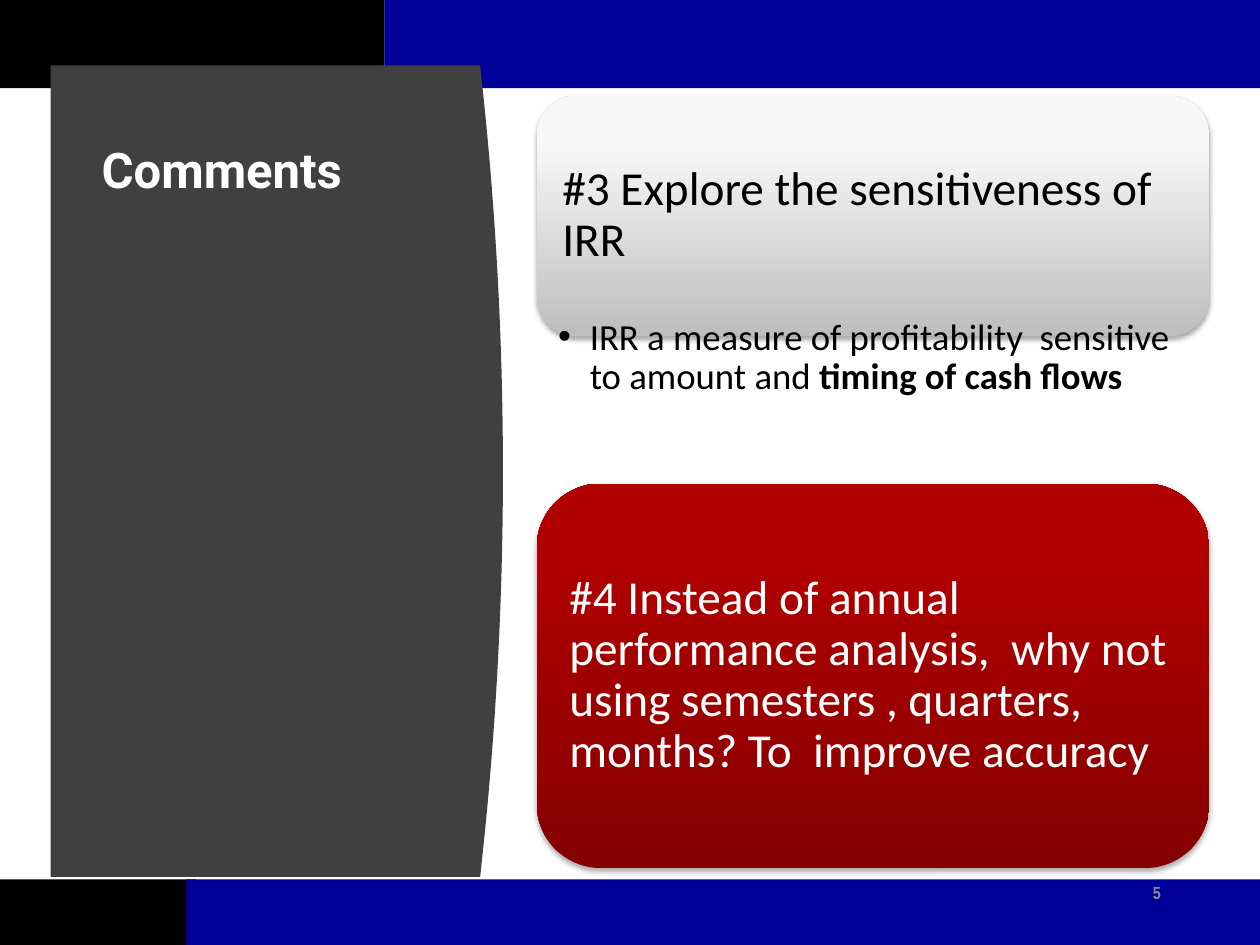
from dataclasses import dataclass

from lxml.etree import SubElement
from pptx import Presentation
from pptx.dml.color import RGBColor
from pptx.enum.shapes import MSO_SHAPE
from pptx.enum.text import MSO_ANCHOR, MSO_AUTO_SIZE, PP_ALIGN
from pptx.oxml.ns import qn
from pptx.util import Cm, Pt


@dataclass
class Box:
    left: float
    top: float
    width: float
    height: float

    def spot(self) -> list:
        return [Cm(v) for v in (self.left, self.top, self.width, self.height)]


@dataclass
class Band:
    box: Box
    fill: str


@dataclass
class Card:
    box: Box
    low: str
    high: str
    ink: str
    text: str


BLACK, BLUE, WHITE = "000000", "000099", "FFFFFF"
BANDS = [
    Band(Box(0, 17.73, 3.96, 1.32), BLACK),
    Band(Box(3.76, 17.73, 21.64, 1.32), BLUE),
    Band(Box(7.75, 0, 17.65, 1.78), BLUE),
    Band(Box(0, 0, 7.75, 1.78), BLACK),
]
CARDS = [
    Card(Box(10.82, 1.93, 13.56, 4.85), "BEBEBE", "F7F7F7", BLACK,
         "#3 Explore the sensitiveness of IRR"),
    Card(Box(10.82, 9.75, 13.56, 7.75), "850000", "B00000", WHITE,
         "#4 Instead of annual performance analysis,  why not using "
         "semesters , quarters, months? To  improve accuracy"),
]


def hue(code: str) -> RGBColor:
    return RGBColor.from_string(code)


def style(para, face: str, size: float, ink: str, bold: bool | None = None) -> None:
    para.font.name = face
    para.font.size = Pt(size)
    para.font.color.rgb = hue(ink)
    para.font.bold = bold


def inset(frame, left: float, top: float, right: float, base: float) -> None:
    frame.word_wrap = True
    frame.auto_size = MSO_AUTO_SIZE.NONE
    frame.margin_left, frame.margin_top = Cm(left), Cm(top)
    frame.margin_right, frame.margin_bottom = Cm(right), Cm(base)


def paint(shape, fill: str) -> None:
    shape.shadow.inherit = False
    shape.fill.solid()
    shape.fill.fore_color.rgb = hue(fill)
    shape.line.fill.background()


def place(holder, box: Box) -> None:
    holder.left, holder.top, holder.width, holder.height = box.spot()
    node = holder.element
    node.getparent().append(node)


def draw_band(slide, band: Band) -> None:
    paint(slide.shapes.add_shape(MSO_SHAPE.RECTANGLE, *band.box.spot()), band.fill)


def draw_panel(slide) -> None:
    left, top, base, edge, bulge, steps = 1.02, 1.32, 17.68, 9.68, 0.46, 40
    curve = []
    for i in range(steps + 1):
        t = 2 * i / steps - 1
        curve.append((Cm(edge + bulge * (1 - t * t)), Cm(top + (base - top) * i / steps)))
    pen = slide.shapes.build_freeform(Cm(left), Cm(top))
    pen.add_line_segments(curve + [(Cm(left), Cm(base))], close=True)
    paint(pen.convert_to_shape(), "404040")


def add_glow(shape) -> None:
    shape.shadow.inherit = False
    glow = shape.element.spPr.find(qn("a:effectLst"))
    drop = SubElement(glow, qn("a:outerShdw"), blurRad=str(Pt(3.1)), dist=str(Pt(1.8)),
                      dir="5400000", rotWithShape="0")
    tint = SubElement(drop, qn("a:srgbClr"), val=BLACK)
    SubElement(tint, qn("a:alpha"), val="35000")


def draw_card(slide, card: Card) -> None:
    shape = slide.shapes.add_shape(MSO_SHAPE.ROUNDED_RECTANGLE, *card.box.spot())
    shape.line.fill.background()
    shape.fill.gradient()
    shape.fill.gradient_angle = 90
    for stop, code, pos in zip(shape.fill.gradient_stops, (card.low, card.high), (0, 0.8)):
        stop.color.rgb = hue(code)
        stop.position = pos
    add_glow(shape)
    frame = shape.text_frame
    inset(frame, 0.28, 0.28, 0.28, 0.28)
    frame.vertical_anchor = MSO_ANCHOR.MIDDLE
    para = frame.paragraphs[0]
    para.text = card.text
    para.alignment = PP_ALIGN.LEFT
    para.line_spacing = 0.9
    style(para, "Calibri", 27, card.ink)


def set_title(slide) -> None:
    title = slide.shapes.title
    place(title, Box(1.8, 2.82, 7.11, 13.31))
    frame = title.text_frame
    inset(frame, 0.25, 0.13, 0.25, 0.13)
    frame.vertical_anchor = MSO_ANCHOR.TOP
    para = frame.paragraphs[0]
    para.text = "Comments"
    para.alignment = PP_ALIGN.LEFT
    para.line_spacing = 0.9
    style(para, "Roboto", 28, WHITE, True)


def set_list(slide) -> None:
    body = slide.placeholders[1]
    place(body, Box(10.82, 6.32, 13.56, 3.43))
    frame = body.text_frame
    inset(frame, 0.43, 0.1, 0.53, 0.1)
    para = frame.paragraphs[0]
    para.add_run().text = "IRR a measure of profitability  sensitive to amount and "
    bold = para.add_run()
    bold.text = "timing of cash flows"
    bold.font.bold = True
    para.line_spacing = 0.9
    para.space_before = Pt(0)
    style(para, "Calibri", 21, BLACK)
    props = para._p.get_or_add_pPr()
    props.set("marL", str(Cm(0.64)))
    props.set("indent", str(-Cm(0.64)))


def add_page(slide) -> None:
    box = slide.shapes.add_textbox(*Box(22.35, 17.65, 1.3, 1.02).spot())
    frame = box.text_frame
    inset(frame, 0.25, 0.13, 0.25, 0.13)
    para = frame.paragraphs[0]
    para.text = "5"
    para.alignment = PP_ALIGN.RIGHT
    style(para, "Arial Narrow", 10, "8C8C8C", True)


def main() -> None:
    deck = Presentation()
    deck.slide_width, deck.slide_height = Cm(25.4), Cm(19.05)
    slide = deck.slides.add_slide(deck.slide_layouts[1])
    for band in BANDS:
        draw_band(slide, band)
    draw_panel(slide)
    set_title(slide)
    add_page(slide)
    for card in CARDS:
        draw_card(slide, card)
    set_list(slide)
    deck.save("out.pptx")


if __name__ == "__main__":
    main()
